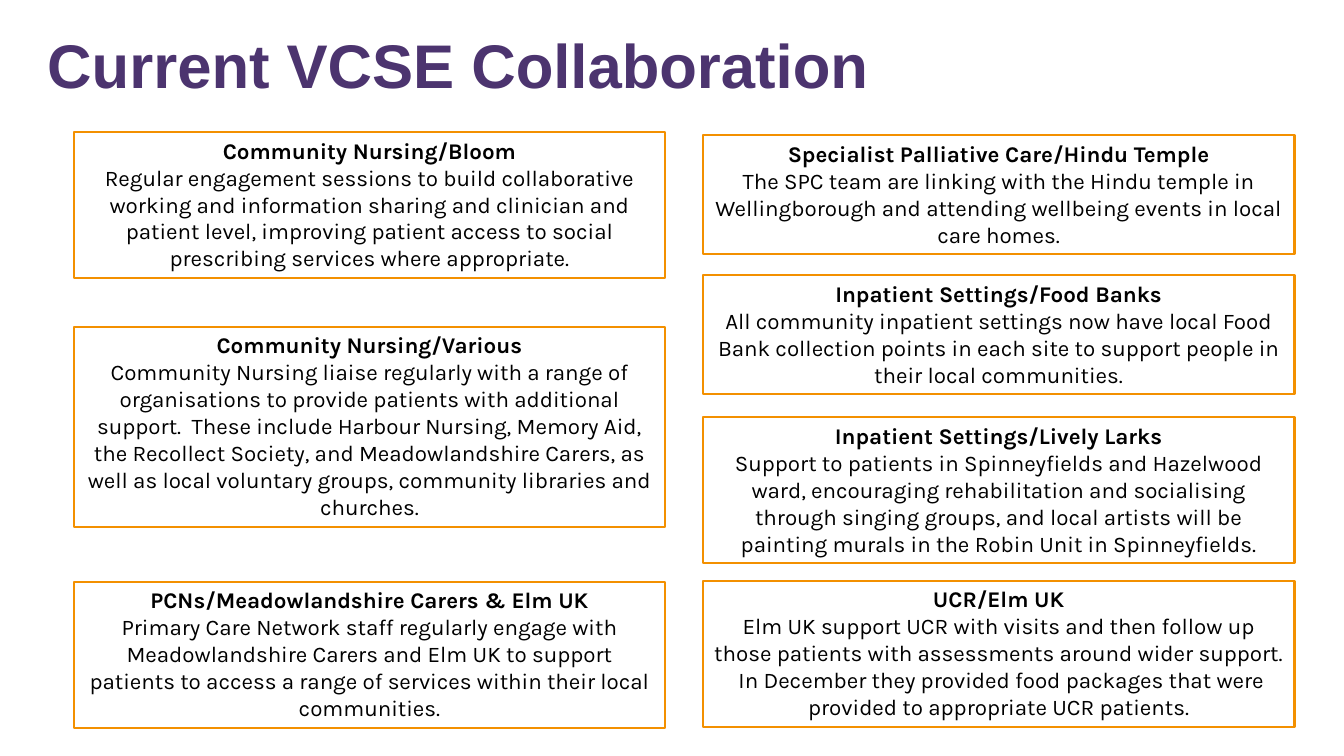
from pptx import Presentation
from pptx.dml.color import RGBColor
from pptx.enum.shapes import MSO_SHAPE
from pptx.enum.text import MSO_ANCHOR, MSO_AUTO_SIZE, PP_ALIGN
from pptx.util import Inches, Pt

PURPLE = RGBColor(0x4C, 0x34, 0x6F)
ORANGE = RGBColor(0xF3, 0x90, 0x00)
WHITE = RGBColor(0xFF, 0xFF, 0xFF)
BLACK = RGBColor(0x00, 0x00, 0x00)

CARD_WIDTH = 5.87
LEFT_COLUMN = 0.73
RIGHT_COLUMN = 6.97

# left, top, height, heading, body
CARDS = [
    (LEFT_COLUMN, 1.31, 1.45, "Community Nursing/Bloom",
     "Regular engagement sessions to build collaborative working and "
     "information sharing and clinician and patient level, improving patient "
     "access to social prescribing services where appropriate."),
    (LEFT_COLUMN, 3.24, 1.99, "Community Nursing/Various",
     "Community Nursing liaise regularly with a range of organisations to "
     "provide patients with additional support.  These include Harbour "
     "Nursing, Memory Aid, the Recollect Society, and Meadowlandshire Carers, "
     "as well as local voluntary groups, community libraries and churches."),
    (LEFT_COLUMN, 5.77, 1.45, "PCNs/Meadowlandshire Carers & Elm UK",
     "Primary Care Network staff regularly engage with Meadowlandshire Carers "
     "and Elm UK to support patients to access a range of services within "
     "their local communities."),
    (RIGHT_COLUMN, 1.34, 1.18, "Specialist Palliative Care/Hindu Temple",
     "The SPC team are linking with the Hindu temple in Wellingborough and "
     "attending wellbeing events in local care homes."),
    (RIGHT_COLUMN, 2.73, 1.18, "Inpatient Settings/Food Banks",
     "All community inpatient settings now have local Food Bank collection "
     "points in each site to support people in their local communities."),
    (RIGHT_COLUMN, 4.14, 1.45, "Inpatient Settings/Lively Larks",
     "Support to patients in Spinneyfields and Hazelwood ward, encouraging "
     "rehabilitation and socialising through singing groups, and local "
     "artists will be painting murals in the Robin Unit in Spinneyfields."),
    (RIGHT_COLUMN, 5.76, 1.45, "UCR/Elm UK",
     "Elm UK support UCR with visits and then follow up those patients with "
     "assessments around wider support.  In December they provided food "
     "packages that were provided to appropriate UCR patients."),
]


def format_run(r, font, size, color, bold):
    r.font.name = font
    r.font.size = Pt(size)
    r.font.color.rgb = color
    r.font.bold = bold


prs = Presentation()
prs.slide_width = Inches(13.33)
prs.slide_height = Inches(7.5)
s = prs.slides.add_slide(prs.slide_layouts[6])

title = s.shapes.add_textbox(Inches(0.37), Inches(0.17), Inches(9), Inches(1.01))
tf = title.text_frame
tf.word_wrap = True
tf.vertical_anchor = MSO_ANCHOR.MIDDLE
tf.text = "Current VCSE Collaboration"
p = tf.paragraphs[0]
p.line_spacing = 0.9
format_run(p.runs[0], "Arial", 44, PURPLE, True)

for left, top, height, heading, body in CARDS:
    card = s.shapes.add_shape(MSO_SHAPE.RECTANGLE, Inches(left), Inches(top),
                              Inches(CARD_WIDTH), Inches(height))
    card.shadow.inherit = False
    card.fill.solid()
    card.fill.fore_color.rgb = WHITE
    card.line.color.rgb = ORANGE
    card.line.width = Pt(1.5)
    tf = card.text_frame
    tf.word_wrap = True
    tf.auto_size = MSO_AUTO_SIZE.SHAPE_TO_FIT_TEXT
    tf.vertical_anchor = MSO_ANCHOR.TOP
    tf.text = f"{heading}\n{body}"
    for p, bold in zip(tf.paragraphs, (True, False)):
        p.alignment = PP_ALIGN.CENTER
        format_run(p.runs[0], "Karla", 16, BLACK, bold)

prs.save("out.pptx")
